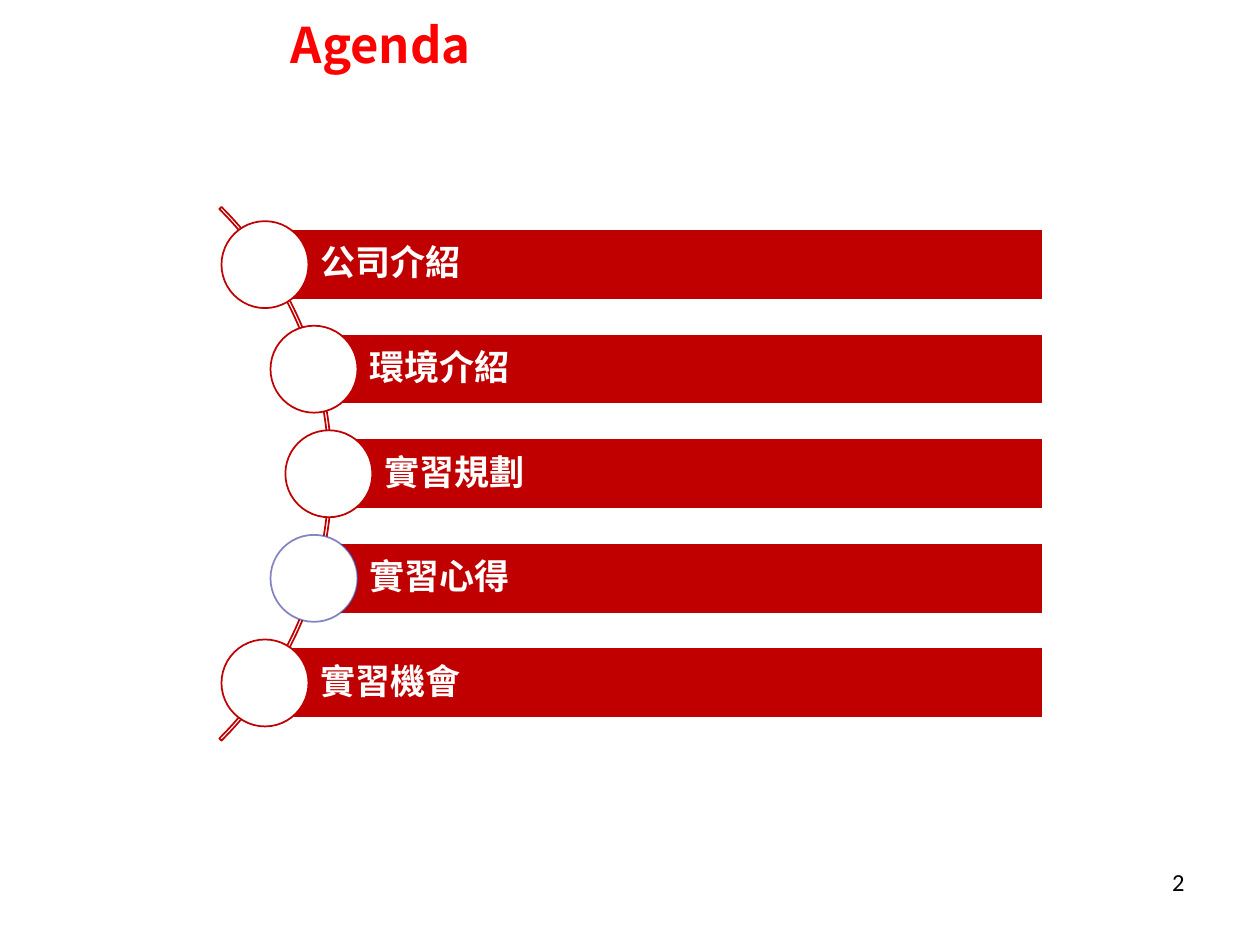
from dataclasses import dataclass
from math import sqrt

from lxml.etree import SubElement
from pptx import Presentation
from pptx.dml.color import RGBColor
from pptx.enum.shapes import MSO_SHAPE as Shape
from pptx.enum.text import MSO_ANCHOR as Anchor, PP_ALIGN as Align
from pptx.oxml.ns import qn
from pptx.util import Inches, Pt

COLORS = {
    "bar": "C00000",
    "title": "FF0000",
    "white": "FFFFFF",
    "black": "000000",
    "accent": "333399",
}
ARC_X, ARC_Y, ARC_SIZE = -0.36, 3.76, 5.99
CENTER_RADIUS = 2.97
PITCH, BAR_HEIGHT, BAR_RIGHT, CIRCLE_SIZE = 0.83, 0.56, 8.28, 0.69


@dataclass
class AgendaItem:
    label: str
    outline: str = "bar"
    opacity: int = 100


ITEMS = [
    AgendaItem("公司介紹"),
    AgendaItem("環境介紹"),
    AgendaItem("實習規劃"),
    AgendaItem("實習心得", "accent", 60),
    AgendaItem("實習機會"),
]


def color(name: str) -> RGBColor:
    return RGBColor.from_string(COLORS[name])


def write_text(box, text: str, *, size: float, tint: str, font: str = "Calibri",
               bold: bool = False, align=Align.LEFT, anchor=Anchor.TOP,
               insets: tuple = (0.1, 0.05, 0.1, 0.05),
               line_spacing: float = 1.0, space_after: float = 0) -> None:
    frame = box.text_frame
    frame.word_wrap = True
    frame.vertical_anchor = anchor
    (frame.margin_left, frame.margin_top,
     frame.margin_right, frame.margin_bottom) = map(Inches, insets)
    para = frame.paragraphs[0]
    para.alignment = align
    para.line_spacing = line_spacing
    para.space_after = Pt(space_after)
    span = para.add_run()
    span.text = text
    span.font.name = font
    span.font.size = Pt(size)
    span.font.bold = bold
    span.font.color.rgb = color(tint)


def add_text(page, place: tuple, text: str, **style) -> None:
    write_text(page.shapes.add_textbox(*map(Inches, place)), text, **style)


def add_figure(page, kind, place: tuple, outline: str,
               fill: str | None = None, opacity: int = 100):
    figure = page.shapes.add_shape(kind, *map(Inches, place))
    figure.shadow.inherit = False
    if fill:
        figure.fill.solid()
        figure.fill.fore_color.rgb = color(fill)
    else:
        figure.fill.background()
    figure.line.color.rgb = color(outline)
    figure.line.width = Pt(1)
    if opacity < 100:
        line_color = figure.line._ln.find(".//" + qn("a:srgbClr"))
        SubElement(line_color, qn("a:alpha"), val=str(opacity * 1000))
    return figure


def add_arc(page) -> None:
    half = ARC_SIZE / 2
    place = (ARC_X - half, ARC_Y - half, ARC_SIZE, ARC_SIZE)
    arc = add_figure(page, Shape.BLOCK_ARC, place, "bar")
    for index, value in enumerate((189, 27, 0.004)):
        arc.adjustments[index] = value


def add_item(page, item: AgendaItem, offset: float) -> None:
    x = ARC_X + sqrt(CENTER_RADIUS ** 2 - offset ** 2)
    y = ARC_Y + offset
    bar = add_figure(page, Shape.RECTANGLE,
                     (x, y - BAR_HEIGHT / 2, BAR_RIGHT - x, BAR_HEIGHT),
                     "white", "bar")
    write_text(bar, item.label, size=20, tint="white", bold=True,
               anchor=Anchor.MIDDLE, insets=(0.44, 0.06, 0.06, 0.06),
               line_spacing=0.9, space_after=7)
    half = CIRCLE_SIZE / 2
    add_figure(page, Shape.OVAL, (x - half, y - half, CIRCLE_SIZE, CIRCLE_SIZE),
               item.outline, "white", item.opacity)


def main() -> None:
    deck = Presentation()
    deck.slide_width, deck.slide_height = Inches(10), Inches(7.5)
    page = deck.slides.add_slide(deck.slide_layouts[6])
    add_text(page, (2.21, 0.05, 7.48, 0.6), "Agenda", size=28, tint="title",
             font="Noto Sans CJK SC", bold=True, anchor=Anchor.MIDDLE)
    add_text(page, (7.17, 6.83, 2.33, 0.52), "2", size=14, tint="black",
             align=Align.RIGHT)
    add_arc(page)
    middle = len(ITEMS) // 2
    for index, item in enumerate(ITEMS):
        add_item(page, item, (index - middle) * PITCH)
    deck.save("out.pptx")


if __name__ == "__main__":
    main()
